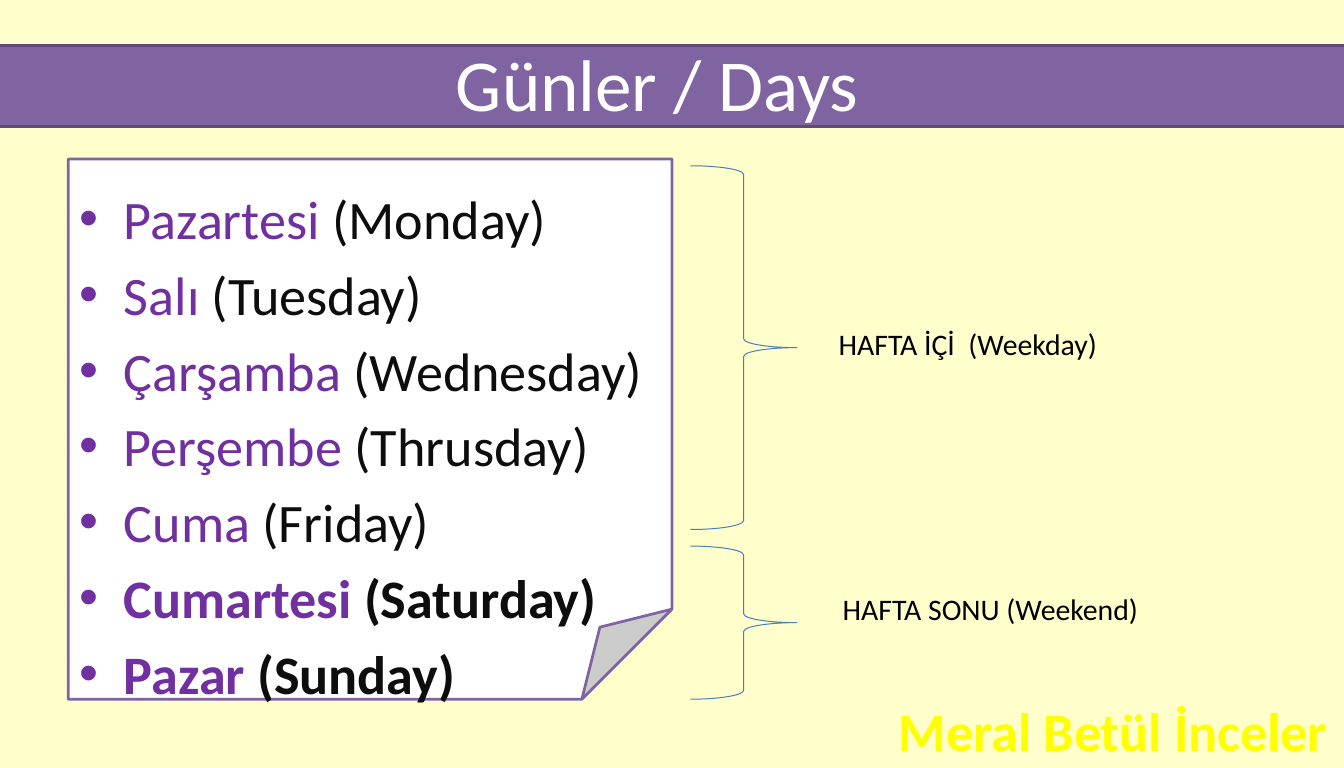
"""Build the slide of Turkish and English day names."""
from pptx import Presentation
from pptx.dml.color import RGBColor
from pptx.enum.shapes import MSO_SHAPE as Shape
from pptx.enum.text import MSO_ANCHOR, MSO_AUTO_SIZE as AutoSize, PP_ALIGN as Align
from pptx.util import Inches, Pt

CREAM = RGBColor(0xFF, 0xFF, 0xCC)
WHITE = RGBColor(0xFF, 0xFF, 0xFF)
BLACK = RGBColor(0x00, 0x00, 0x00)
INK = RGBColor(0x0D, 0x0D, 0x0D)
PURPLE = RGBColor(0x80, 0x64, 0xA2)
DARK_PURPLE = RGBColor(0x5F, 0x4A, 0x78)
VIOLET = RGBColor(0x70, 0x30, 0xA0)
BLUE = RGBColor(0x4B, 0x7E, 0xBC)
YELLOW = RGBColor(0xFF, 0xFF, 0x00)


def add_outlined(kind, box, fill, line, weight):
    outlined = slide.shapes.add_shape(kind, *map(Inches, box))
    outlined.shadow.inherit = False
    if fill is None:
        outlined.fill.background()
    else:
        outlined.fill.solid()
        outlined.fill.fore_color.rgb = fill
    outlined.line.color.rgb = line
    outlined.line.width = Pt(weight)


def style(font, size, color, bold=False):
    font.name = "Calibri"
    font.size = Pt(size)
    font.color.rgb = color
    font.bold = bold


prs = Presentation()
prs.slide_width, prs.slide_height = Pt(992.25), Pt(567)
slide = prs.slides.add_slide(prs.slide_layouts[1])
slide.background.fill.solid()
slide.background.fill.fore_color.rgb = CREAM

add_outlined(Shape.FOLDED_CORNER, (0.7, 1.63, 6.19, 5.54), WHITE, PURPLE, 2)
add_outlined(Shape.RECTANGLE, (-0.28, 0.47, 14.16, 0.83), PURPLE, DARK_PURPLE, 2)

title, days = slide.placeholders
for holder, box in ((title, (0.54, 0.19, 12.4, 1.31)), (days, (0.69, 1.84, 12.17, 5.2))):
    holder.left, holder.top, holder.width, holder.height = map(Inches, box)
    frame = holder.text_frame
    frame.auto_size = AutoSize.NONE
    frame.margin_left = frame.margin_right = Inches(0.12)
    frame.margin_top = frame.margin_bottom = Inches(0.06)
    slide.shapes.element.append(holder.element)

title.text_frame.text = "Günler / Days"
title.text_frame.vertical_anchor = MSO_ANCHOR.MIDDLE
heading = title.text_frame.paragraphs[0]
heading.alignment = Align.CENTER
style(heading.runs[0].font, 54, WHITE)

day_names = [
    ("Pazartesi", "Monday"),
    ("Salı", "Tuesday"),
    ("Çarşamba", "Wednesday"),
    ("Perşembe", "Thrusday"),
    ("Cuma", "Friday"),
    ("Cumartesi", "Saturday"),
    ("Pazar", "Sunday"),
]
weekend = ("Saturday", "Sunday")
for index, (turkish, english) in enumerate(day_names):
    frame = days.text_frame
    day = frame.add_paragraph() if index else frame.paragraphs[0]
    properties = day._p.get_or_add_pPr()
    properties.set("marL", str(Inches(0.46)))
    properties.set("indent", str(-Inches(0.46)))
    for words, color in ((f"{turkish} ", VIOLET), (f"({english})", INK)):
        run = day.add_run()
        run.text = words
        style(run.font, 40, color, english in weekend)

for top, height in ((1.7, 3.73), (5.6, 1.57)):
    add_outlined(Shape.RIGHT_BRACE, (7.08, top, 1.09, height), None, BLUE, 0.75)

labels = [
    ("HAFTA İÇİ  (Weekday)", (8.48, 3.28, 2.93, 0.5), 0.12, 0.06, 22, BLACK, False, Align.LEFT),
    ("HAFTA SONU (Weekend)", (8.52, 6, 3.32, 0.5), 0.12, 0.06, 22, BLACK, False, Align.LEFT),
    ("Meral Betül İnceler", (9.09, 7.1, 4.65, 0.77), 0.1, 0.05, 40, YELLOW, True, Align.CENTER),
]
for words, box, side, edge, size, color, bold, alignment in labels:
    frame = slide.shapes.add_textbox(*map(Inches, box)).text_frame
    frame.word_wrap = False
    frame.auto_size = AutoSize.SHAPE_TO_FIT_TEXT
    frame.margin_left = frame.margin_right = Inches(side)
    frame.margin_top = frame.margin_bottom = Inches(edge)
    frame.text = words
    frame.paragraphs[0].alignment = alignment
    style(frame.paragraphs[0].runs[0].font, size, color, bold)

prs.save("out.pptx")
